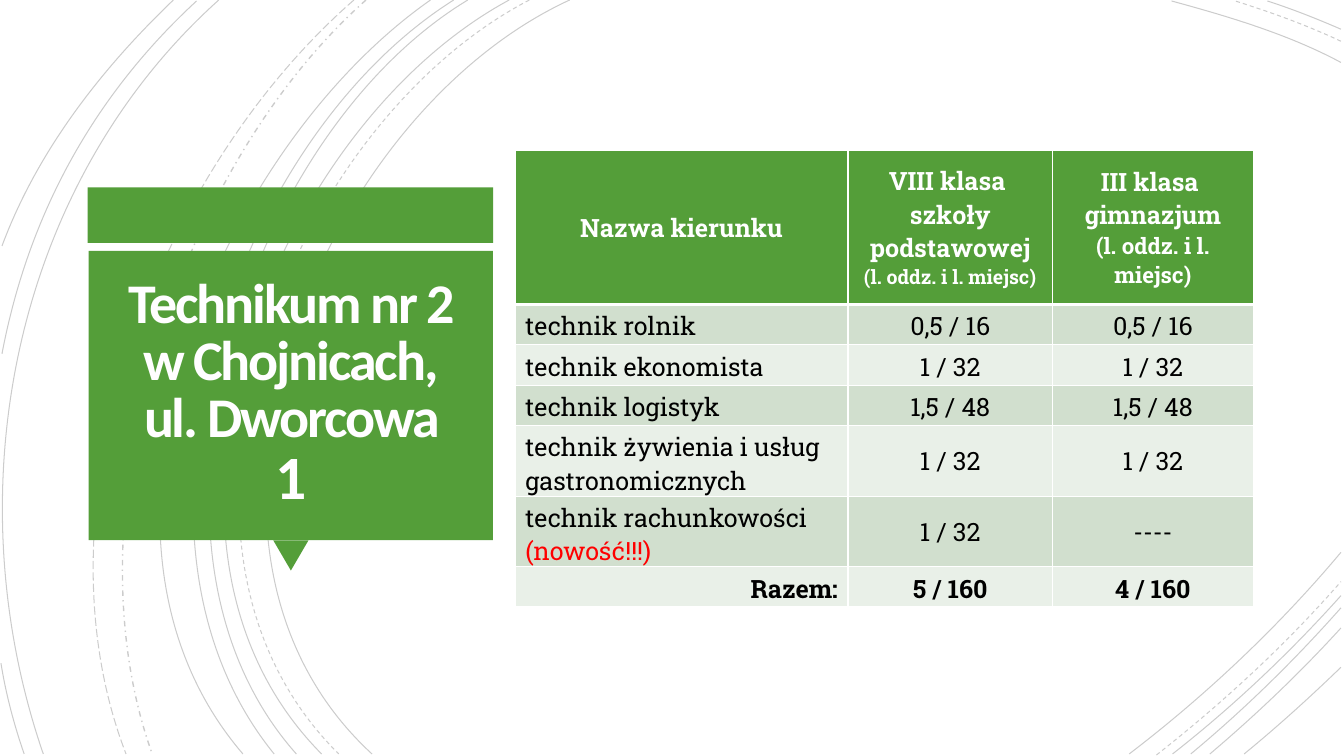
from pptx import Presentation
from pptx import util as u
from pptx.dml.color import RGBColor
from pptx.enum import dml, shapes, text
from pptx.oxml import parse_xml
from pptx.oxml.ns import nsdecls, qn

# Grid: 1333 columns by 750 rows of square cells
CELL = u.Inches(0.01)
COLS, ROWS = 1333, 750

GREEN = RGBColor(0x54, 0x9E, 0x39)
BAND_DARK = RGBColor(0xD1, 0xDF, 0xCE)
BAND_LIGHT = RGBColor(0xE9, 0xF0, 0xE8)
WHITE = RGBColor(0xFF, 0xFF, 0xFF)
TITLE_WHITE = RGBColor(0xFF, 0xFE, 0xFF)
BLACK = RGBColor(0, 0, 0)
RED = RGBColor(0xFF, 0, 0)

CENTER, LEFT, RIGHT = text.PP_ALIGN.CENTER, text.PP_ALIGN.LEFT, text.PP_ALIGN.RIGHT
MIDDLE, TOP = text.MSO_ANCHOR.MIDDLE, text.MSO_ANCHOR.TOP
SOLID, DASH = dml.MSO_LINE.SOLID, dml.MSO_LINE.DASH
DASH_DOT, LONG_DASH = dml.MSO_LINE.DASH_DOT, dml.MSO_LINE.LONG_DASH

# Arcs: start, two control points and end, as x, y pairs in grid cells
ARCS = [
    (SOLID, [
        (565, 0, 315, 115, 143, 540, 369, 748),
        (1330, 62, 1278, 34, 1217, 16, 1162, 1),
        (1120, 748, 1196, 690, 1268, 622, 1330, 548),
        (505, 0, 270, 127, 110, 537, 319, 748),
        (1330, 29, 1307, 19, 1282, 9, 1257, 1),
        (1163, 748, 1223, 701, 1279, 648, 1330, 591),
        (464, 0, 244, 133, 110, 541, 294, 748),
        (1181, 748, 1234, 704, 1284, 655, 1330, 603),
        (450, 0, 231, 138, 97, 533, 272, 748),
        (1200, 748, 1246, 709, 1290, 667, 1330, 623),
        (427, 0, 217, 147, 53, 529, 241, 748),
        (1234, 748, 1267, 721, 1299, 692, 1330, 662),
        (217, 0, 11, 185, -46, 490, 43, 748),
        (195, 1, 92, 96, 28, 214, 2, 351),
        (1, 658, 6, 689, 14, 719, 24, 748),
        (172, 0, 100, 69, 37, 150, 2, 244),
    ]),
    (DASH, [
        (525, 0, 285, 125, 123, 537, 336, 748),
        (1330, 41, 1296, 25, 1260, 12, 1225, 1),
        (1147, 749, 1212, 698, 1275, 640, 1330, 577),
    ]),
    (DASH_DOT, [(363, 0, 176, 166, 65, 509, 151, 748)]),
    (LONG_DASH, [(351, 0, 157, 169, 29, 499, 125, 748)]),
]

# Table content: a cell is a list of paragraphs, a paragraph a list of runs
HEADER = [
    [[("Nazwa kierunku", {})]],
    [[("VIII klasa ", {})], [("szkoły podstawowej", {})],
     [("(l. oddz. i l. miejsc)", {"size": 14})]],
    [[("III klasa ", {})], [("gimnazjum", {})],
     [("(l. oddz. i l. miejsc)", {"size": 16})]],
]
COURSES = [
    ([[("technik rolnik", {})]], "0,5 / 16", "0,5 / 16"),
    ([[("technik ekonomista", {})]], "1 / 32", "1 / 32"),
    ([[("technik logistyk", {})]], "1,5 / 48", "1,5 / 48"),
    ([[("technik żywienia i usług", {})], [("gastronomicznych", {})]], "1 / 32", "1 / 32"),
    ([[("technik rachunkowości ", {}), ("(nowość!!!)", {"color": RED})]], "1 / 32", "----"),
    ([[("Razem:", {})]], "5 / 160", "4 / 160"),
]
COL_WIDTHS = [330, 203, 199]
ROW_HEIGHTS = [153, 40, 40, 40, 70, 70, 40]


def write(tf, paragraphs, align=LEFT, spacing=None, track=None, **base):
    """Fill a text frame; a run's own format overrides the base format."""
    for i, runs in enumerate(paragraphs):
        p = tf.paragraphs[0] if i == 0 else tf.add_paragraph()
        p.alignment = align
        if spacing:
            p.line_spacing = spacing
        for content, own in runs:
            if content == "\n":
                p.add_line_break()
                continue
            fmt = {**base, **own}
            r = p.add_run()
            r.text = content
            r.font.name, r.font.size = fmt["font"], u.Pt(fmt["size"])
            r.font.bold, r.font.color.rgb = fmt["bold"], fmt["color"]
            if track:
                r.font._element.set("spc", str(track))


def add_arc(s, points, dash):
    pairs = list(zip(points[::2], points[1::2]))
    builder = s.shapes.build_freeform(*pairs[0], scale=CELL)
    builder.add_line_segments(pairs[1:], close=False)
    arc = builder.convert_to_shape()
    # Join the three segments into one Bézier curve
    outline = next(arc._element.iter(qn("a:path")))
    curve = parse_xml(f"<a:cubicBezTo {nsdecls('a')}/>")
    for segment in outline.findall(qn("a:lnTo")):
        curve.append(segment[0])
        outline.remove(segment)
    outline.append(curve)
    arc.shadow.inherit = False
    arc.fill.background()
    arc.line.width = u.Pt(1 if dash == DASH_DOT else 0.75)
    arc.line.color.rgb = BLACK
    arc.line.dash_style = dash
    color = next(arc.line._ln.iter(qn("a:srgbClr")))
    color.append(parse_xml(f'<a:alpha {nsdecls("a")} val="20000"/>'))


def add_background(s):
    for dash, arcs in ARCS:
        for points in arcs:
            add_arc(s, points, dash)


def add_green(s, kind, x, y, w, h):
    sp = s.shapes.add_shape(kind, x * CELL, y * CELL, w * CELL, h * CELL)
    sp.shadow.inherit = False
    sp.fill.solid()
    sp.fill.fore_color.rgb = GREEN
    sp.line.fill.background()
    return sp


def add_title_panel(s, x, y, w, h):
    rect, triangle = shapes.MSO_SHAPE.RECTANGLE, shapes.MSO_SHAPE.ISOSCELES_TRIANGLE
    bar, gap, tip = 55, 8, 30
    body_y, body_h = y + bar + gap, h - bar - gap - tip
    add_green(s, rect, x, y, w, bar)
    pointer = add_green(s, triangle, x + 184, y + h - tip, 35, tip)
    pointer.rotation = 180
    add_green(s, rect, x + 1, body_y, w - 1, body_h)
    # Title text
    box = s.shapes.add_textbox((x + 10) * CELL, (body_y + 8) * CELL,
                               (w - 19) * CELL, (body_h - 18) * CELL)
    tf = box.text_frame
    tf.word_wrap, tf.vertical_anchor = True, MIDDLE
    tf.margin_left = tf.margin_right = tf.margin_top = tf.margin_bottom = 25 * CELL
    write(tf, [[("Technikum nr 2 w Chojnicach,", {}), ("\n", {}),
                ("ul. Dworcowa ", {}), ("1", {"size": 44})]],
          align=CENTER, spacing=0.85, track=-150,
          font="Calibri", size=40, bold=True, color=TITLE_WHITE)


def style_cell(cell, fill, bottom):
    tcPr = cell._tc.get_or_add_tcPr()
    for side, width in (("L", 1), ("R", 1), ("T", 1), ("B", bottom)):
        tcPr.append(parse_xml(
            f'<a:ln{side} {nsdecls("a")} w="{u.Pt(width)}"><a:solidFill>'
            f'<a:srgbClr val="{WHITE}"/></a:solidFill></a:ln{side}>'))
    cell.fill.solid()
    cell.fill.fore_color.rgb = fill


def add_course_table(s, x, y, w, h):
    rows = [HEADER] + [[name] + [[[(v, {})]] for v in values] for name, *values in COURSES]
    table = s.shapes.add_table(len(rows), len(HEADER), x * CELL, y * CELL,
                               w * CELL, h * CELL).table
    table.first_row = table.horz_banding = False
    for column, width in zip(table.columns, COL_WIDTHS):
        column.width = width * CELL
    for row, height in zip(table.rows, ROW_HEIGHTS):
        row.height = height * CELL
    last = len(rows) - 1
    for i, row in enumerate(rows):
        head, total = i == 0, i == last
        fill = GREEN if head else BAND_DARK if i % 2 else BAND_LIGHT
        for j, paragraphs in enumerate(row):
            cell = table.cell(i, j)
            style_cell(cell, fill, bottom=3 if head else 1)
            centered = head or j > 0
            cell.vertical_anchor = MIDDLE if centered and not total else TOP
            write(cell.text_frame, paragraphs,
                  align=CENTER if centered else RIGHT if total else LEFT,
                  font="Roboto Slab", size=18, bold=head or total,
                  color=WHITE if head else BLACK)


def main():
    prs = Presentation()
    prs.slide_width, prs.slide_height = COLS * CELL, ROWS * CELL
    s = prs.slides.add_slide(prs.slide_layouts[6])
    add_background(s)
    add_title_panel(s, 87, 186, 402, 380)
    add_course_table(s, 511, 149, sum(COL_WIDTHS), sum(ROW_HEIGHTS))
    prs.save("out.pptx")


if __name__ == "__main__":
    main()
